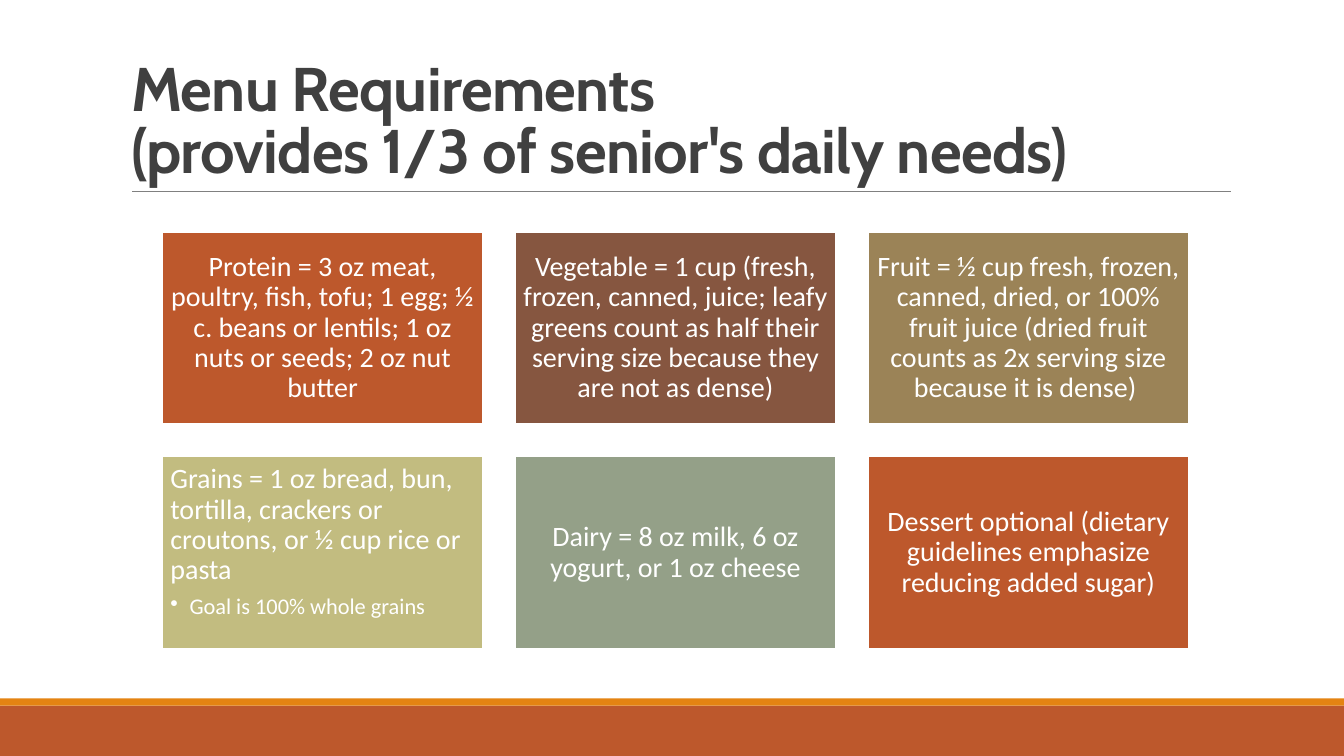
"""Build the menu requirements slide: a title above a grid of six food cards."""
from dataclasses import dataclass

from lxml import etree
from pptx import Presentation
from pptx import util as u
from pptx.dml.color import RGBColor
from pptx.enum import shapes, text
from pptx.oxml.ns import qn

TITLE_LINES = ["Menu Requirements", "(provides 1/3 of senior's daily needs)"]
CARDS = [
    ("BD582C", "Protein = 3 oz meat, poultry, fish, tofu; 1 egg; ½ c. beans or lentils; "
               "1 oz nuts or seeds; 2 oz nut butter", []),
    ("865640", "Vegetable = 1 cup (fresh, frozen, canned, juice; leafy greens count as half "
               "their serving size because they are not as dense)", []),
    ("9B8357", "Fruit = ½ cup fresh, frozen, canned, dried, or 100% fruit juice "
               "(dried fruit counts as 2x serving size because it is dense) ", []),
    ("C2BC80", "Grains = 1 oz bread, bun, tortilla, crackers or croutons, "
               "or ½ cup rice or pasta", ["Goal is 100% whole grains"]),
    ("94A088", "Dairy = 8 oz milk, 6 oz yogurt, or 1 oz cheese", []),
    ("BD582C", "Dessert optional (dietary guidelines emphasize reducing added sugar)", []),
]


@dataclass(frozen=True)
class Theme:
    title_font: str = "Cabin"
    body_font: str = "Calibri"
    title_color: str = "404040"
    white: str = "FFFFFF"
    rule: str = "808080"
    footer: str = "BD582C"
    accent: str = "E48312"
    title_size: int = 44
    card_size: int = 20
    bullet_size: int = 16


THEME = Theme()
SLIDE_WIDTH, SLIDE_HEIGHT = 13.33, 7.5
FOOTER_TOP, ACCENT_HEIGHT = 7, 0.07
RULE_LEFT, RULE_RIGHT, RULE_TOP = 1.31, 12.21, 1.9
TITLE_BOX = (1.2, 0.31, 11, 1.59)
COLUMNS = 3
GRID_LEFT, GRID_TOP = 1.61, 2.3
CARD_WIDTH, CARD_HEIGHT, GAP = 3.18, 1.91, 0.32
CARD_INSET, BULLET_INDENT = 0.08, 0.19


def color(value):
    return RGBColor.from_string(value)


def add_run(paragraph, words, font, size, ink, bold=False):
    run = paragraph.add_run()
    run.text = words
    run.font.name, run.font.size, run.font.bold = font, u.Pt(size), bold
    run.font.color.rgb = color(ink)
    return run


def add_box(slide, left, top, width, height, fill):
    shape = slide.shapes.add_shape(
        shapes.MSO_SHAPE.RECTANGLE, *map(u.Inches, (left, top, width, height)))
    shape.shadow.inherit = False
    shape.fill.solid()
    shape.fill.fore_color.rgb = color(fill)
    shape.line.fill.background()
    return shape


def add_title(slide):
    title = slide.shapes.title
    title.left, title.top, title.width, title.height = map(u.Inches, TITLE_BOX)
    frame = title.text_frame
    frame.auto_size = text.MSO_AUTO_SIZE.NONE
    frame.word_wrap = True
    frame.vertical_anchor = text.MSO_ANCHOR.BOTTOM
    paragraph = frame.paragraphs[0]
    paragraph.alignment = text.PP_ALIGN.LEFT
    paragraph.line_spacing = 0.85
    for index, line in enumerate(TITLE_LINES):
        if index:
            paragraph.add_line_break()
        run = add_run(paragraph, line, THEME.title_font, THEME.title_size,
                      THEME.title_color, bold=True)
        run.font._element.set("spc", "-50")


def add_rule(slide):
    rule = slide.shapes.add_connector(
        shapes.MSO_CONNECTOR.STRAIGHT,
        *map(u.Inches, (RULE_LEFT, RULE_TOP, RULE_RIGHT, RULE_TOP)))
    rule.line.color.rgb = color(THEME.rule)
    rule.line.width = u.Pt(0.5)
    etree.SubElement(rule._element.spPr, qn("a:effectLst"))


def add_bullet(paragraph):
    properties = paragraph._p.get_or_add_pPr()
    indent = u.Inches(BULLET_INDENT)
    properties.set("marL", str(indent))
    properties.set("indent", str(-indent))
    etree.SubElement(properties, qn("a:buChar")).set("char", "•")


def add_card(slide, index, fill, heading, bullets):
    row, column = divmod(index, COLUMNS)
    card = add_box(slide, GRID_LEFT + column * (CARD_WIDTH + GAP),
                   GRID_TOP + row * (CARD_HEIGHT + GAP), CARD_WIDTH, CARD_HEIGHT, fill)
    card.line.color.rgb = color(THEME.white)
    card.line.width = u.Pt(1.25)
    frame = card.text_frame
    frame.word_wrap = True
    frame.margin_left = frame.margin_right = u.Inches(CARD_INSET)
    frame.margin_top = frame.margin_bottom = u.Inches(CARD_INSET)
    frame.vertical_anchor = text.MSO_ANCHOR.TOP if bullets else text.MSO_ANCHOR.MIDDLE
    paragraph = frame.paragraphs[0]
    paragraph.alignment = text.PP_ALIGN.LEFT if bullets else text.PP_ALIGN.CENTER
    paragraph.line_spacing = 0.9
    add_run(paragraph, heading, THEME.body_font, THEME.card_size, THEME.white)
    if bullets:
        paragraph.space_after = u.Pt(0.35 * THEME.card_size)
    for bullet in bullets:
        paragraph = frame.add_paragraph()
        paragraph.level = 1
        add_bullet(paragraph)
        paragraph.alignment = text.PP_ALIGN.LEFT
        paragraph.line_spacing = 0.9
        add_run(paragraph, bullet, THEME.body_font, THEME.bullet_size, THEME.white)


def main():
    presentation = Presentation()
    presentation.slide_width = u.Inches(SLIDE_WIDTH)
    presentation.slide_height = u.Inches(SLIDE_HEIGHT)
    slide = presentation.slides.add_slide(presentation.slide_layouts[5])
    add_box(slide, 0, FOOTER_TOP, SLIDE_WIDTH, SLIDE_HEIGHT - FOOTER_TOP, THEME.footer)
    add_box(slide, 0, FOOTER_TOP - ACCENT_HEIGHT, SLIDE_WIDTH, ACCENT_HEIGHT, THEME.accent)
    add_rule(slide)
    add_title(slide)
    for index, card in enumerate(CARDS):
        add_card(slide, index, *card)
    presentation.save("out.pptx")


if __name__ == "__main__":
    main()
